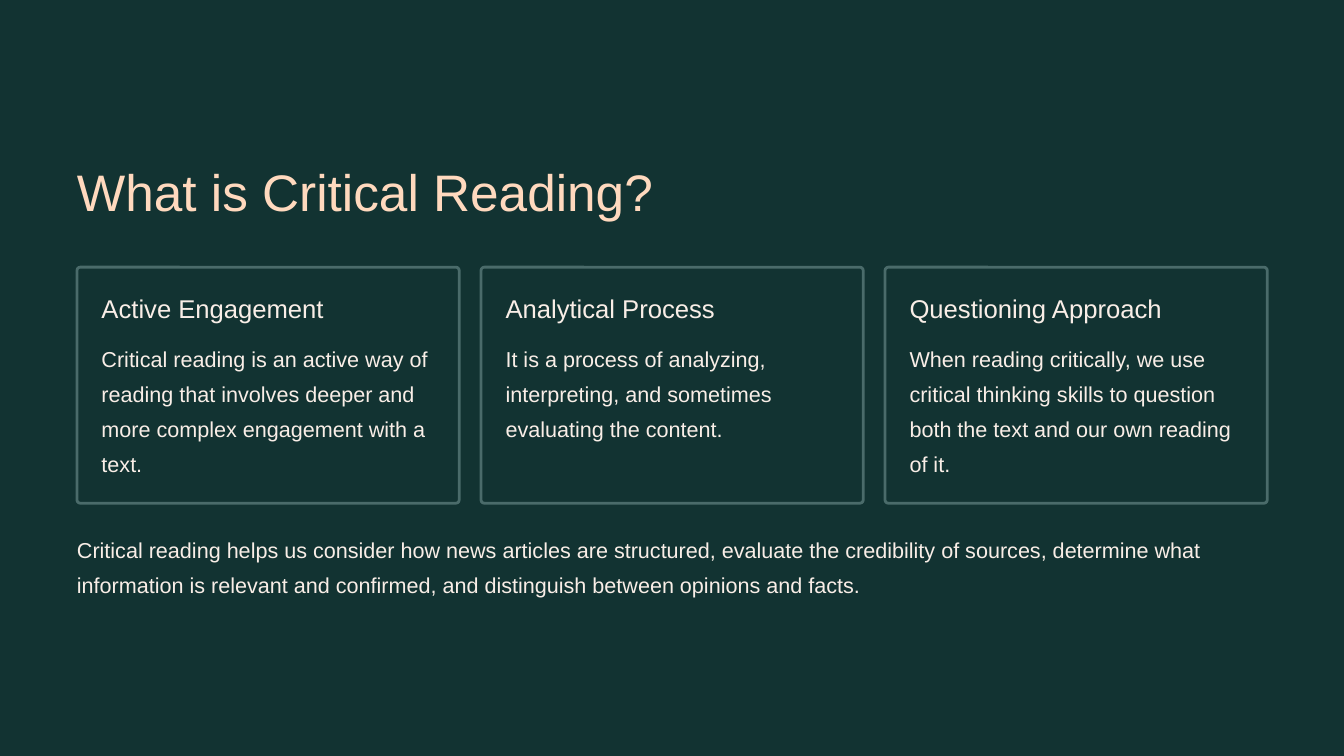
from pptx import Presentation
from pptx.dml.color import RGBColor
from pptx.enum.shapes import MSO_SHAPE
from pptx.util import Pt

GREEN, PEACH, CREAM, BORDER = "123332", "FFD9BE", "F9EEE7", "4A6B6A"


def color(value):
    return RGBColor.from_string(value)


def add_text(text, left, top, width, height, size, spacing, ink=CREAM, wrap=True):
    frame = slide.shapes.add_textbox(Pt(left), Pt(top), Pt(width), Pt(height)).text_frame
    frame.margin_left = frame.margin_top = frame.margin_right = frame.margin_bottom = 0
    frame.word_wrap = wrap
    paragraph = frame.paragraphs[0]
    paragraph.text = text
    paragraph.line_spacing = Pt(spacing)
    paragraph.font.name = "Arial"
    paragraph.font.size = Pt(size)
    paragraph.font.color.rgb = color(ink)


prs = Presentation()
prs.slide_width, prs.slide_height = Pt(1152), Pt(648)
slide = prs.slides.add_slide(prs.slide_layouts[6])

# Background and title
slide.background.fill.solid()
slide.background.fill.fore_color.rgb = color(GREEN)
margin = 66
add_text("What is Critical Reading?", margin, 135.4, 497.5, 55.4, 44, 55, PEACH, wrap=False)

# Three cards
card_width, card_height, gap = 327.6, 202.3, 18.7
card_top, padding = 229, 21
cards = [
    ("Active Engagement",
     "Critical reading is an active way of reading that involves deeper and "
     "more complex engagement with a text."),
    ("Analytical Process",
     "It is a process of analyzing, interpreting, and sometimes evaluating the content."),
    ("Questioning Approach",
     "When reading critically, we use critical thinking skills to question "
     "both the text and our own reading of it."),
]
for index, (heading, description) in enumerate(cards):
    card_left = margin + index * (card_width + gap)
    card = slide.shapes.add_shape(MSO_SHAPE.ROUNDED_RECTANGLE, Pt(card_left), Pt(card_top),
                                  Pt(card_width), Pt(card_height))
    card.adjustments[0] = 0.014
    card.shadow.inherit = False
    card.fill.solid()
    card.fill.fore_color.rgb = color(GREEN)
    card.line.color.rgb = color(BORDER)
    card.line.width = Pt(2.4)

    text_left, text_width = card_left + padding, card_width - 2 * padding
    add_text(heading, text_left, card_top + padding, text_width, 27.4, 22, 27.5, wrap=False)
    add_text(description, text_left, 288.7, text_width, 121, 18.5, 30)

# Closing statement
add_text("Critical reading helps us consider how news articles are structured, evaluate the "
         "credibility of sources, determine what information is relevant and confirmed, and "
         "distinguish between opinions and facts.",
         margin, 452.2, 1020.2, 60.5, 18.5, 30)

prs.save("out.pptx")
